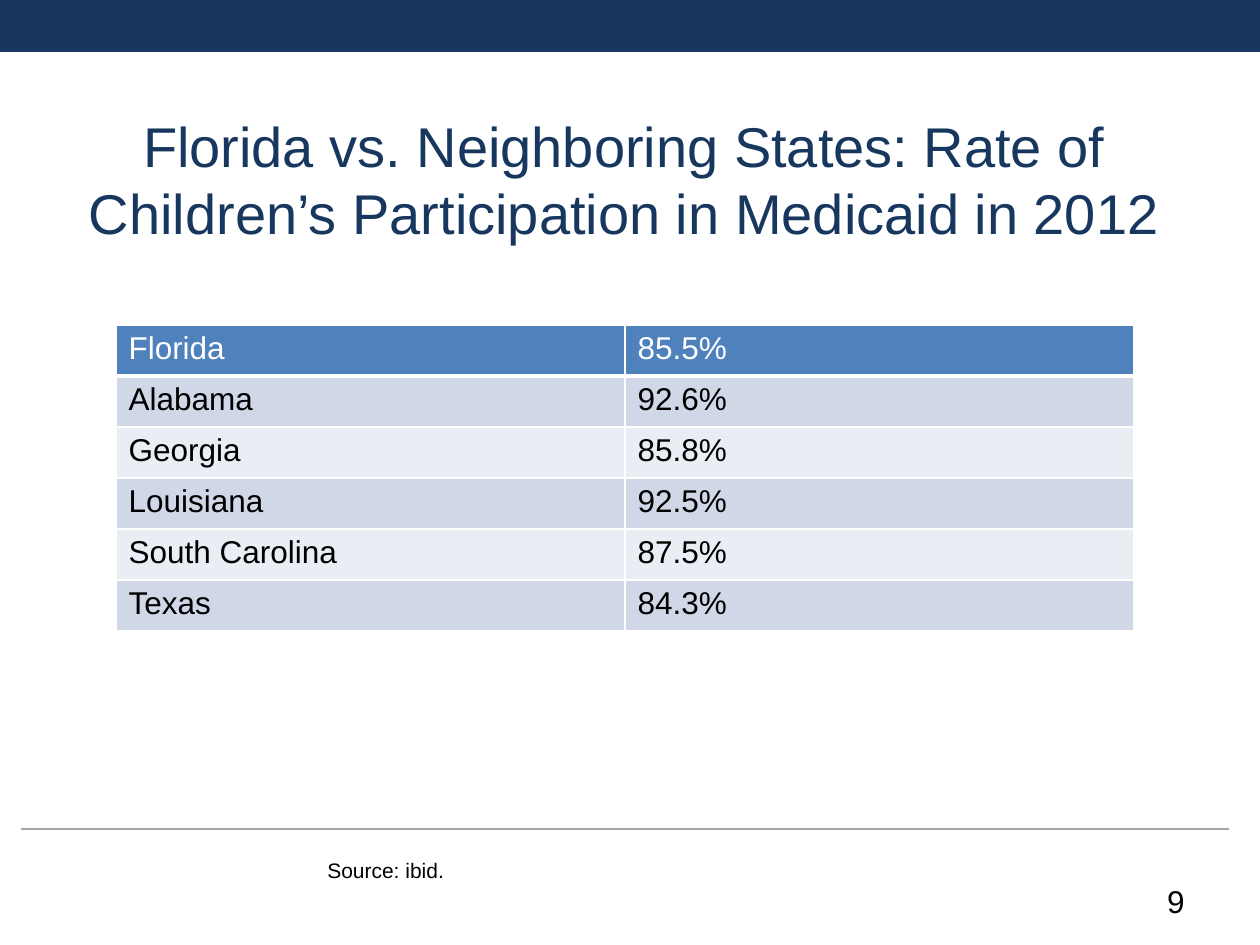
import dataclasses

import pptx
import pptx.dml.color
import pptx.enum.shapes
import pptx.enum.text
import pptx.oxml
import pptx.oxml.ns
import pptx.util

ALIGN = pptx.enum.text.PP_ALIGN
ANCHOR = pptx.enum.text.MSO_ANCHOR
FIT = pptx.enum.text.MSO_AUTO_SIZE


@dataclasses.dataclass(frozen=True)
class Theme:
    face: str = "Arial"
    navy: str = "17375E"
    blue: str = "4F81BD"
    bands: tuple = ("D0D8E8", "E9EDF4")
    rule: str = "A6A6A6"
    white: str = "FFFFFF"
    black: str = "000000"
    head: int = 32
    body: int = 18
    note: int = 12


def px(count):
    return pptx.util.Emu(round(count * 914400 / 126))


def rgb(code):
    return pptx.dml.color.RGBColor.from_string(code)


def put(target, values):
    for name, value in values.items():
        setattr(target, name, value)


class Deck:
    """Draw styled elements on the current slide."""

    def __init__(self, theme):
        self.theme = theme
        self.file = pptx.Presentation()
        put(self.file, {"slide_width": px(1260), "slide_height": px(945)})
        self.slide = self.file.slides.add_slide(self.file.slide_layouts[5])

    def words(self, frame, text, size, color, align=ALIGN.LEFT):
        frame.text = text
        para = frame.paragraphs[0]
        para.alignment = align
        font = para.runs[0].font
        put(font, {"name": self.theme.face, "size": pptx.util.Pt(size), "bold": False})
        font.color.rgb = rgb(color)

    def title(self, left, top, width, height, text):
        shape = self.slide.shapes.title
        put(shape, {"left": px(left), "top": px(top), "width": px(width), "height": px(height)})
        put(shape.text_frame, {"word_wrap": True, "auto_size": FIT.NONE,
                               "vertical_anchor": ANCHOR.MIDDLE})
        self.words(shape.text_frame, text, self.theme.head, self.theme.navy, ALIGN.CENTER)

    def bar(self, left, top, width, height, color):
        kind = pptx.enum.shapes.MSO_SHAPE.RECTANGLE
        shape = self.slide.shapes.add_shape(kind, px(left), px(top), px(width), px(height))
        shape.shadow.inherit = False
        shape.fill.solid()
        shape.fill.fore_color.rgb = rgb(color)
        shape.line.fill.background()

    def line(self, left, top, right, color):
        kind = pptx.enum.shapes.MSO_CONNECTOR.STRAIGHT
        rule = self.slide.shapes.add_connector(kind, px(left), px(top), px(right), px(top))
        rule.line.color.rgb = rgb(color)
        rule.line.width = pptx.util.Pt(0.75)
        rule._element.spPr.append(pptx.oxml.parse_xml(
            f"<a:effectLst {pptx.oxml.ns.nsdecls('a')}/>"))

    def label(self, left, top, width, height, text, size, align=ALIGN.LEFT):
        box = self.slide.shapes.add_textbox(px(left), px(top), px(width), px(height))
        box.text_frame.word_wrap = True
        self.words(box.text_frame, text, size, self.theme.black, align)

    def edge(self, cell, widths):
        props = cell._tc.get_or_add_tcPr()
        for side, width in widths.items():
            props.append(pptx.oxml.parse_xml(
                f"<a:ln{side} {pptx.oxml.ns.nsdecls('a')} w='{pptx.util.Pt(width)}'>"
                f"<a:solidFill><a:srgbClr val='{self.theme.white}'/></a:solidFill>"
                f"</a:ln{side}>"))

    def table(self, left, top, width, step, rows):
        look = self.theme
        grid = self.slide.shapes.add_table(len(rows), len(rows[0]), px(left), px(top),
                                           px(width), px(step * len(rows))).table
        for i, row in enumerate(rows):
            fill = look.bands[(i - 1) % 2] if i else look.blue
            ink = look.black if i else look.white
            for j, text in enumerate(row):
                cell = grid.cell(i, j)
                self.edge(cell, {"L": 1, "R": 1, "T": 3 if i == 1 else 1, "B": 1 if i else 3})
                cell.fill.solid()
                cell.fill.fore_color.rgb = rgb(fill)
                self.words(cell.text_frame, text, look.body, ink)


def main():
    look = Theme()
    deck = Deck(look)
    deck.bar(0, 0, 1260, 52, look.navy)
    deck.line(21, 829, 1229, look.rule)
    deck.title(42, 63, 1165, 231,
               "Florida vs. Neighboring States: Rate of Children’s Participation in Medicaid in 2012")
    deck.table(116, 325, 1018, 51, [
        ("Florida", "85.5%"),
        ("Alabama", "92.6%"),
        ("Georgia", "85.8%"),
        ("Louisiana", "92.5%"),
        ("South Carolina", "87.5%"),
        ("Texas", "84.3%"),
    ])
    deck.label(903, 876, 294, 50, "9", look.body, ALIGN.RIGHT)
    deck.label(315, 851, 630, 38, "Source: ibid.", look.note)
    deck.file.save("out.pptx")


if __name__ == "__main__":
    main()
